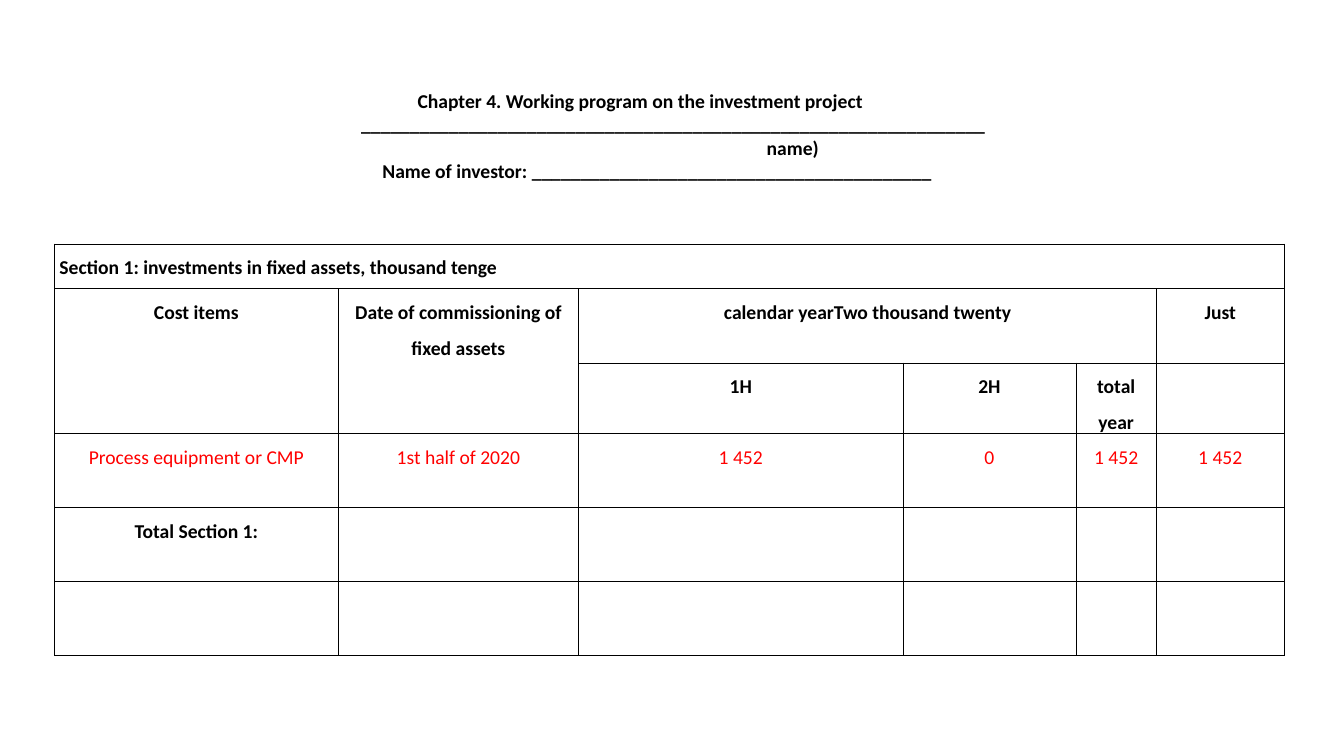
from dataclasses import dataclass

from lxml import etree
from pptx import Presentation
from pptx.dml.color import RGBColor
from pptx.enum.text import PP_ALIGN
from pptx.oxml.ns import qn
from pptx.util import Pt

CENTER = PP_ALIGN.CENTER
LEFT = PP_ALIGN.LEFT

BLACK = RGBColor(0x00, 0x00, 0x00)
RED = RGBColor(0xFF, 0x00, 0x00)

FONT = "Calibri"
FONT_SIZE = 28
EMU_PER_PX = 9144  # 100 px to the inch


@dataclass(frozen=True)
class HeadingLine:
    text: str
    left_indent: int = 0
    right_indent: int = 0


@dataclass(frozen=True)
class TableCell:
    row: int
    column: int
    text: str
    row_span: int = 1
    column_span: int = 1
    align: PP_ALIGN = CENTER
    color: RGBColor = BLACK
    bold: bool = True


HEADING_LINES = [
    HeadingLine("Chapter 4. Working program on the investment project", right_indent=18),
    HeadingLine("_" * 64, left_indent=113),
    HeadingLine("name)", left_indent=588),
    HeadingLine("Name of investor: " + "_" * 41, left_indent=49),
]

COLUMN_WIDTHS = [563, 477, 644, 343, 160, 253]
ROW_HEIGHTS = [89, 147, 87, 147, 147, 147]
COST_VALUES = ["Process equipment or CMP", "1st half of 2020", "1 452", "0", "1 452", "1 452"]

TABLE_CELLS = [
    TableCell(0, 0, "Section 1: investments in fixed assets, thousand tenge",
              column_span=6, align=LEFT),
    TableCell(1, 0, "Cost items", row_span=2),
    TableCell(1, 1, "Date of commissioning of fixed assets", row_span=2),
    TableCell(1, 2, "calendar yearTwo thousand twenty", column_span=3),
    TableCell(1, 5, "Just"),
    TableCell(2, 2, "1H"),
    TableCell(2, 3, "2H"),
    TableCell(2, 4, "total year"),
    *(TableCell(3, column, value, color=RED, bold=False)
      for column, value in enumerate(COST_VALUES)),
    TableCell(4, 0, "Total Section 1:"),
]


def px(length: int) -> int:
    return length * EMU_PER_PX


def write_text(paragraph, text: str, *, align: PP_ALIGN = CENTER, color: RGBColor = BLACK,
               bold: bool = True, line_spacing: float = 1.0) -> None:
    paragraph.alignment = align
    paragraph.line_spacing = line_spacing
    run = paragraph.add_run()
    run.text = text
    run.font.name = FONT
    run.font.size = Pt(FONT_SIZE)
    run.font.bold = bold
    run.font.color.rgb = color


def draw_heading(slide, lines: list[HeadingLine]) -> None:
    text_box = slide.shapes.add_textbox(px(108), px(130), px(2342), px(286))
    text_frame = text_box.text_frame
    text_frame.word_wrap = True
    text_frame.margin_top = px(46)
    for index, line in enumerate(lines):
        paragraph = text_frame.add_paragraph() if index else text_frame.paragraphs[0]
        write_text(paragraph, line.text)
        properties = paragraph._p.get_or_add_pPr()
        properties.set("marL", str(px(line.left_indent)))
        properties.set("marR", str(px(line.right_indent)))


def add_borders(cell) -> None:
    properties = cell._tc.get_or_add_tcPr()
    for side in ("a:lnL", "a:lnR", "a:lnT", "a:lnB"):
        line = etree.SubElement(properties, qn(side), w=str(Pt(1)))
        fill = etree.SubElement(line, qn("a:solidFill"))
        etree.SubElement(fill, qn("a:srgbClr"), val=str(BLACK))


def draw_table(slide, cells: list[TableCell]) -> None:
    frame = slide.shapes.add_table(len(ROW_HEIGHTS), len(COLUMN_WIDTHS),
                                   px(108), px(484), px(2439), px(810))
    table = frame.table
    table.first_row = False
    table.horz_banding = False
    for column, width in zip(table.columns, COLUMN_WIDTHS):
        column.width = px(width)
    for row, height in zip(table.rows, ROW_HEIGHTS):
        row.height = px(height)
    frame.height = px(810)

    # Grid lines and insets
    for cell in table.iter_cells():
        add_borders(cell)
        cell.fill.background()
        cell.margin_left = cell.margin_right = px(10)
        cell.margin_top = cell.margin_bottom = 0

    # Cell contents
    for item in cells:
        cell = table.cell(item.row, item.column)
        if item.row_span > 1 or item.column_span > 1:
            cell.merge(table.cell(item.row + item.row_span - 1,
                                  item.column + item.column_span - 1))
        write_text(cell.text_frame.paragraphs[0], item.text, align=item.align,
                   color=item.color, bold=item.bold, line_spacing=1.5)


def main() -> None:
    presentation = Presentation()
    presentation.slide_width = px(2667)
    presentation.slide_height = px(1500)
    slide = presentation.slides.add_slide(presentation.slide_layouts[6])
    draw_heading(slide, HEADING_LINES)
    draw_table(slide, TABLE_CELLS)
    presentation.save("out.pptx")


if __name__ == "__main__":
    main()
